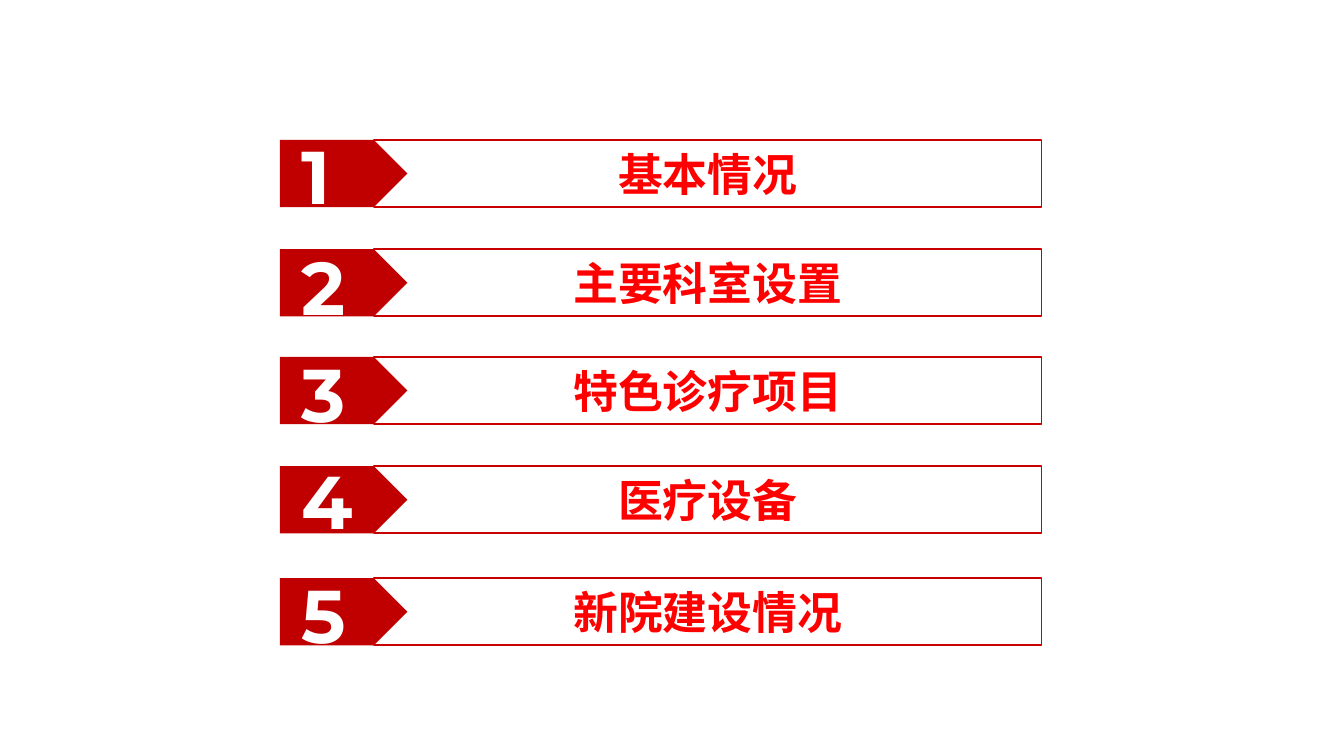
from pptx import Presentation
from pptx.dml.color import RGBColor
from pptx.enum.shapes import MSO_SHAPE
from pptx.enum.text import MSO_ANCHOR, PP_ALIGN
from pptx.oxml.ns import qn
from pptx.util import Pt
from lxml import etree

PX = 9525  # 96 px to the inch
COLORS = {"white": "FFFFFF", "border": "C80000", "arrow": "C00000", "title": "FF0000"}
TITLE = {"size": Pt(24), "name": "Noto Sans CJK SC", "bold": True}
NUMBER = {"size": Pt(40), "name": "Montserrat", "bold": True}


def rgb(name):
    return RGBColor.from_string(COLORS[name])


def write(sp, text, font, color, align, anchor):
    tf = sp.text_frame
    tf.word_wrap = True
    tf.vertical_anchor = anchor
    p = tf.paragraphs[0]
    p.alignment = align
    r = p.add_run()
    r.text = text
    for key, value in font.items():
        setattr(r.font, key, value)
    r.font.color.rgb = rgb(color)
    etree.SubElement(r.font._element, qn("a:ea"), typeface=font["name"])


prs = Presentation()
prs.slide_width, prs.slide_height = 960 * PX, 540 * PX
s = prs.slides.add_slide(prs.slide_layouts[6])

# Agenda rows: title, row top, number top
rows = [
    ("基本情况", 100, 88),
    ("主要科室设置", 178, 167),
    ("特色诊疗项目", 255, 244),
    ("医疗设备", 333, 320),
    ("新院建设情况", 413, 402),
]
for i, (title, top, number_top) in enumerate(rows, 1):
    shapes = s.shapes.add_group_shape().shapes

    # Title bar
    bar = shapes.add_shape(MSO_SHAPE.RECTANGLE, 267 * PX, top * PX, 477 * PX, 48 * PX)
    bar.shadow.inherit = False
    bar.fill.solid()
    bar.fill.fore_color.rgb = rgb("white")
    bar.line.color.rgb = rgb("border")
    bar.line.width = Pt(1)
    write(bar, title, TITLE, "title", PP_ALIGN.CENTER, MSO_ANCHOR.MIDDLE)

    # Arrow tag
    tag = shapes.add_shape(MSO_SHAPE.PENTAGON, 200 * PX, top * PX, 91 * PX, 48 * PX)
    tag.shadow.inherit = False
    tag.fill.solid()
    tag.fill.fore_color.rgb = rgb("arrow")
    tag.line.fill.background()

    # Number
    number = shapes.add_textbox(206 * PX, number_top * PX, 56 * PX, 74 * PX)
    write(number, str(i), NUMBER, "white", PP_ALIGN.LEFT, MSO_ANCHOR.TOP)

prs.save("out.pptx")
